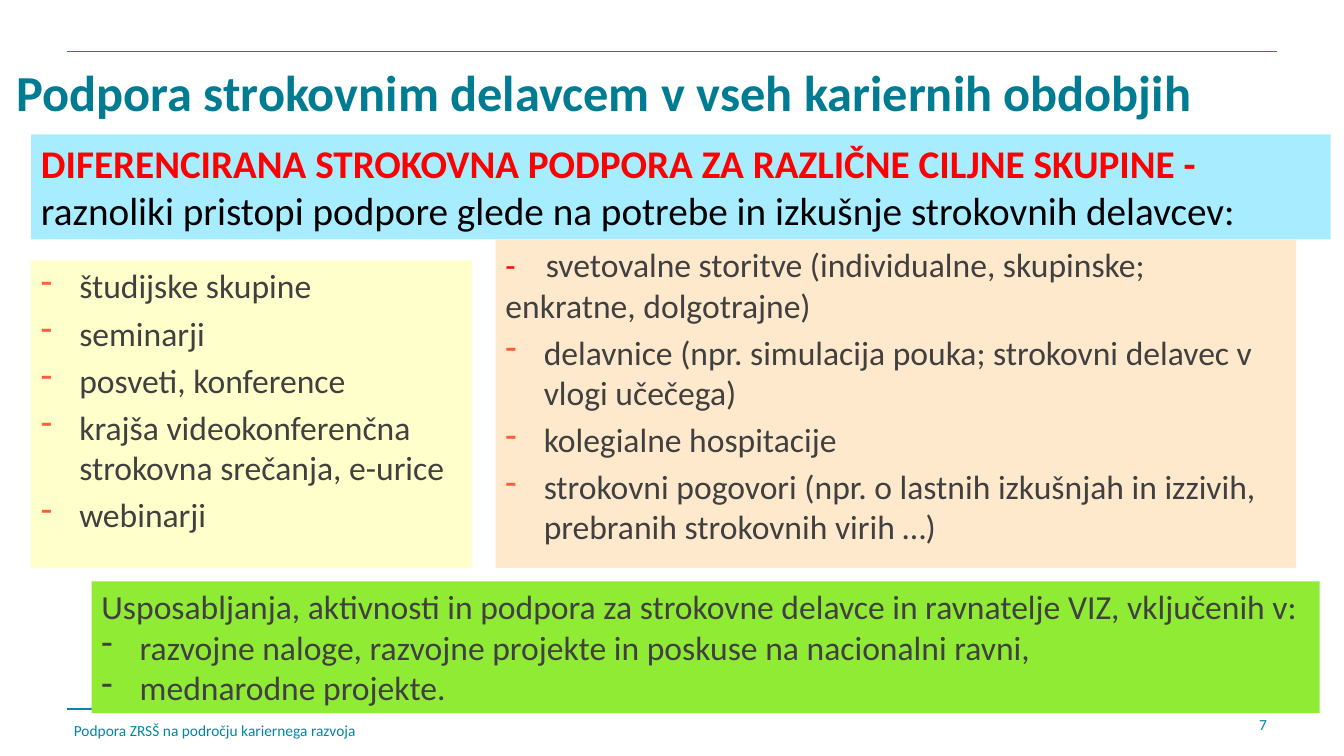
import pptx
import pptx.dml.color
import pptx.enum.shapes
import pptx.enum.text
import pptx.util
from lxml import etree
from pptx.oxml.ns import qn

COLS, ROWS = 160, 90
CELL = pptx.util.Inches(1) / 12
FONT = "Calibri"
INDENT = pptx.util.Inches(0.38)
COLORS = {
    "title": "007C92", "accent": "0086A8", "text": "404040", "black": "000000",
    "red": "FF0000", "bullet": "FF5C3E", "blue": "A8EDFF", "yellow": "FFFFCC",
    "orange": "FFE9CC", "green": "90EB35",
}


def cells(*counts):
    """Turn counts of grid columns or rows into lengths."""
    return [pptx.util.Emu(round(n * CELL)) for n in counts]


def rgb(name):
    return pptx.dml.color.RGBColor.from_string(COLORS[name])


def add_rule(s, row):
    x1, y, x2 = cells(8, row, 152)
    line = s.shapes.add_connector(pptx.enum.shapes.MSO_CONNECTOR.STRAIGHT, x1, y, x2, y)
    line.line.color.rgb = rgb("accent")
    line.line.width = pptx.util.Pt(1)
    etree.SubElement(line._element.spPr, qn("a:effectLst"))


def add_box(s, place, fill=None):
    """Add a top-anchored text frame, on a coloured panel if fill is given."""
    if fill:
        sp = s.shapes.add_shape(pptx.enum.shapes.MSO_SHAPE.RECTANGLE, *cells(*place))
        sp.shadow.inherit = False
        sp.fill.solid()
        sp.fill.fore_color.rgb = rgb(fill)
        sp.line.fill.background()
    else:
        sp = s.shapes.add_textbox(*cells(*place))
    tf = sp.text_frame
    tf.word_wrap = True
    tf.vertical_anchor = pptx.enum.text.MSO_ANCHOR.TOP
    return tf


def add_paragraph(tf, space=0, align="LEFT"):
    """Use the empty first paragraph, or append one with space before it."""
    p = tf.paragraphs[0]
    if p.runs:
        p = tf.add_paragraph()
        p.space_before = pptx.util.Pt(space)
    p.alignment = getattr(pptx.enum.text.PP_ALIGN, align)
    return p


def add_text(p, text, size=24, color="text", bold=False):
    r = p.add_run()
    r.text = text
    r.font.name = FONT
    r.font.size = pptx.util.Pt(size)
    r.font.bold = bold
    r.font.color.rgb = rgb(color)


def add_dashes(tf, items, space=0, color=None):
    """Add dash-bulleted paragraphs with a hanging indent."""
    for item in items:
        p = add_paragraph(tf, space)
        pPr = p._p.get_or_add_pPr()
        pPr.set("marL", str(INDENT))
        pPr.set("indent", str(-INDENT))
        if color:
            clr = etree.SubElement(pPr, qn("a:buClr"))
            etree.SubElement(clr, qn("a:srgbClr"), val=COLORS[color])
        etree.SubElement(pPr, qn("a:buChar"), char="-")
        add_text(p, item)


def add_tab_stop(p, inches):
    tabs = etree.SubElement(p._p.get_or_add_pPr(), qn("a:tabLst"))
    etree.SubElement(tabs, qn("a:tab"), pos=str(pptx.util.Inches(inches)), algn="l")


def main():
    prs = pptx.Presentation()
    prs.slide_width, prs.slide_height = cells(COLS, ROWS)
    s = prs.slides.add_slide(prs.slide_layouts[6])

    for row in (84.4, 6.1):
        add_rule(s, row)

    title = add_box(s, (0.8, 6.7, 144, 15))
    add_text(add_paragraph(title), "Podpora strokovnim delavcem v vseh kariernih obdobjih",
             size=36, color="title", bold=True)

    groups = add_box(s, (3.7, 31, 52.5, 36.6), "yellow")
    add_dashes(groups, [
        "študijske skupine",
        "seminarji",
        "posveti, konference",
        "krajša videokonferenčna strokovna srečanja, e-urice",
        "webinarji",
    ], space=4.8, color="bullet")

    footer = add_box(s, (7.6, 85.3, 97.3, 4.7))
    add_text(add_paragraph(footer), "Podpora ZRSŠ na področju kariernega razvoja",
             size=11, color="accent")
    number = add_box(s, (114.7, 84.6, 37.3, 4.8))
    add_text(add_paragraph(number, align="RIGHT"), "7", size=11, color="accent")

    heading = add_paragraph(add_box(s, (3.7, 16, 154.7, 12.5), "blue"))
    add_text(heading, "DIFERENCIRANA STROKOVNA PODPORA ZA RAZLIČNE CILJNE SKUPINE -",
             size=28, color="red", bold=True)
    add_text(heading, " raznoliki pristopi podpore glede na potrebe in izkušnje "
             "strokovnih delavcev:", size=28, color="black")

    services = add_box(s, (59, 28.5, 95.3, 39.1), "orange")
    p = add_paragraph(services)
    add_tab_stop(p, 0.4)
    add_text(p, "-", color="red")
    add_text(p, "\tsvetovalne storitve (individualne, skupinske;")
    p.add_line_break()
    add_text(p, "enkratne, dolgotrajne)")
    add_dashes(services, [
        "delavnice (npr. simulacija pouka; strokovni delavec v vlogi učečega)",
        "kolegialne hospitacije",
        "strokovni pogovori (npr. o lastnih izkušnjah in izzivih, "
        "prebranih strokovnih virih …)",
    ], space=4.8, color="bullet")

    training = add_box(s, (10.9, 69.2, 146.2, 15.7), "green")
    add_text(add_paragraph(training), "Usposabljanja, aktivnosti in podpora za strokovne "
             "delavce in ravnatelje VIZ, vključenih v:")
    add_dashes(training, [
        "razvojne naloge, razvojne projekte in poskuse na nacionalni ravni,",
        "mednarodne projekte.",
    ])

    prs.save("out.pptx")


if __name__ == "__main__":
    main()
